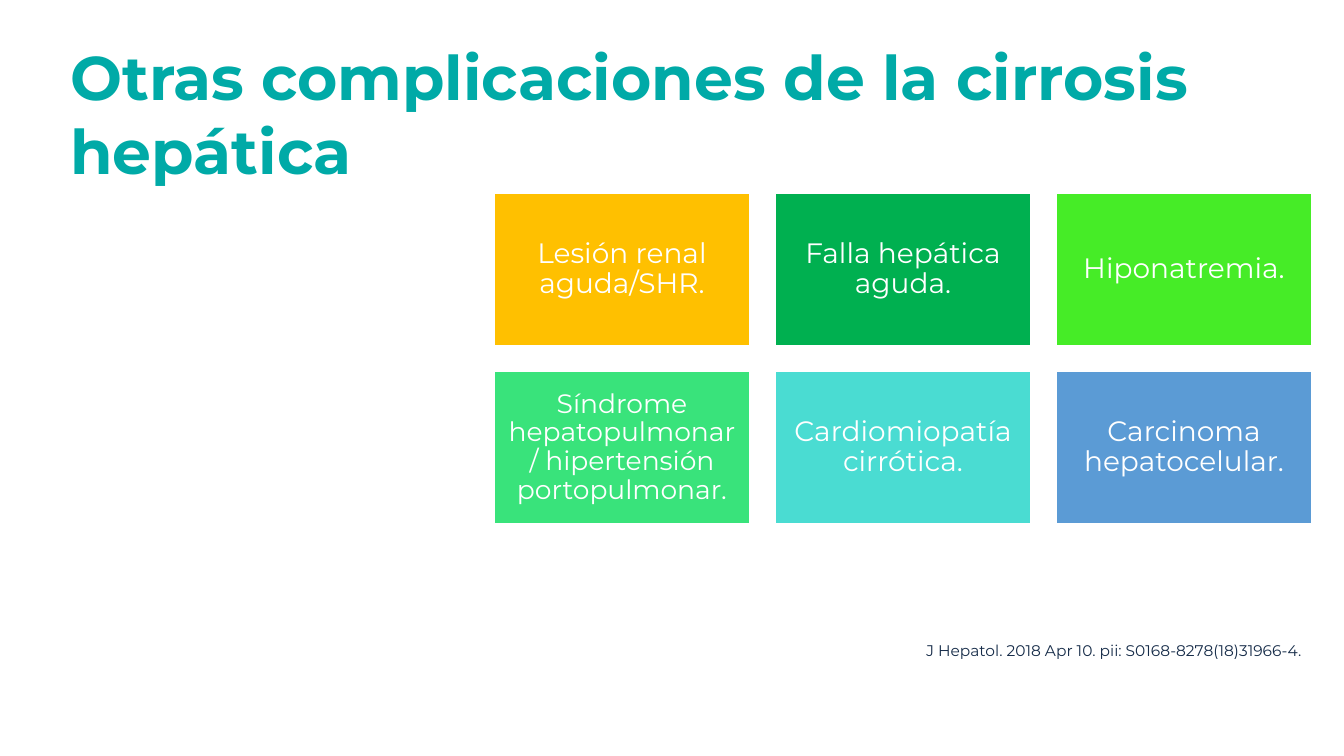
from pptx import Presentation
from pptx.dml.color import RGBColor
from pptx.enum.shapes import MSO_SHAPE
from pptx.enum.text import MSO_ANCHOR, PP_ALIGN
from pptx.util import Pt

RECT = MSO_SHAPE.RECTANGLE
MIDDLE = MSO_ANCHOR.MIDDLE
LEFT, CENTER, RIGHT = PP_ALIGN.LEFT, PP_ALIGN.CENTER, PP_ALIGN.RIGHT

PX = 914400 / 100.8
THEME = {
    "font": "Montserrat",
    "title": {"size": 44, "color": "00AAA7", "bold": True},
    "card": {"size": 20, "color": "FFFFFF", "bold": False},
    "long_card": {"size": 19, "color": "FFFFFF", "bold": False},
    "citation": {"size": 11, "color": "152B48", "bold": False},
    "border": "FFFFFF",
}


def px(n):
    return round(n * PX)


def write(tf, text, style, align):
    """Fill a text frame with one styled, wrapped paragraph."""
    tf.word_wrap = True
    p = tf.paragraphs[0]
    p.alignment = align
    r = p.add_run()
    r.text = text
    look = THEME[style]
    for name, value in {"name": THEME["font"], "size": Pt(look["size"]), "bold": look["bold"]}.items():
        setattr(r.font, name, value)
    r.font.color.rgb = RGBColor.from_string(look["color"])
    return p


prs = Presentation()
prs.slide_width, prs.slide_height = px(1344), px(756)
s = prs.slides.add_slide(prs.slide_layouts[5])

# Title
title = s.shapes.title
for name, value in {"left": 60, "top": 33, "width": 1200, "height": 159}.items():
    setattr(title, name, px(value))
title.text_frame.vertical_anchor = MIDDLE
write(title.text_frame, "Otras complicaciones de la cirrosis hepática", "title", LEFT)

# Grid of complications
COMPLICATIONS = [
    ("Lesión renal aguda/SHR.", "FFC000", "card"),
    ("Falla hepática aguda.", "00B050", "card"),
    ("Hiponatremia.", "46EC27", "card"),
    ("Síndrome hepatopulmonar / hipertensión portopulmonar.", "39E37B", "long_card"),
    ("Cardiomiopatía cirrótica.", "4ADCD2", "card"),
    ("Carcinoma hepatocelular.", "5B9BD5", "card"),
]
COLUMNS = 3
GRID_LEFT, GRID_TOP = 494, 193
CARD_W, CARD_H, GAP = 256, 153, 25
for i, (text, fill, style) in enumerate(COMPLICATIONS):
    row, col = divmod(i, COLUMNS)
    sp = s.shapes.add_shape(RECT, px(GRID_LEFT + col * (CARD_W + GAP)),
                            px(GRID_TOP + row * (CARD_H + GAP)), px(CARD_W), px(CARD_H))
    sp.shadow.inherit = False
    sp.fill.solid()
    sp.fill.fore_color.rgb = RGBColor.from_string(fill)
    sp.line.color.rgb = RGBColor.from_string(THEME["border"])
    sp.line.width = Pt(1)
    tf = sp.text_frame
    tf.vertical_anchor = MIDDLE
    for side in ("left", "top", "right", "bottom"):
        setattr(tf, f"margin_{side}", px(8))
    write(tf, text, style, CENTER).line_spacing = 0.9

# Citation
citation = s.shapes.add_textbox(px(873), px(636), px(439), px(29))
write(citation.text_frame, "J Hepatol. 2018 Apr 10. pii: S0168-8278(18)31966-4.", "citation", RIGHT)

prs.save("out.pptx")
